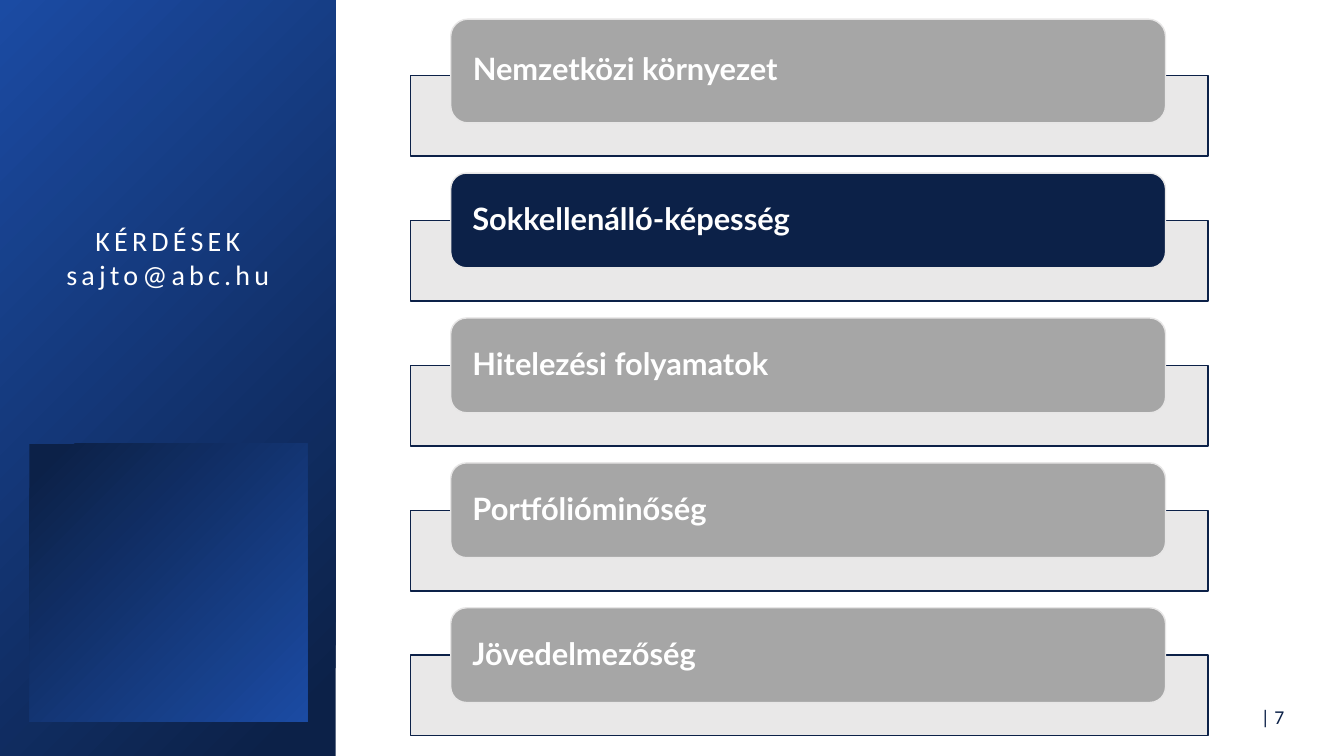
import pptx
import pptx.dml.color
import pptx.enum.shapes
import pptx.enum.text
import pptx.oxml.ns
import pptx.util
import lxml.etree

Inches = pptx.util.Inches
Pt = pptx.util.Pt
Shapes = pptx.enum.shapes.MSO_SHAPE
Align = pptx.enum.text.PP_ALIGN
Anchor = pptx.enum.text.MSO_ANCHOR

NAVY, BLUE, WHITE = "0C2148", "1B4BA3", "FFFFFF"
GREY, PALE = "A6A6A6", "E7E6E6"

TOPICS = [
    "Nemzetközi környezet",
    "Sokkellenálló-képesség",
    "Hitelezési folyamatok",
    "Portfólióminőség",
    "Jövedelmezőség",
]
CURRENT_TOPIC = 1


def color(code):
    return pptx.dml.color.RGBColor.from_string(code)


def add_panel(page, kind, left, top, width, height, fill=None, line=None, alpha=None):
    panel = page.shapes.add_shape(
        kind, Inches(left), Inches(top), Inches(width), Inches(height))
    panel.shadow.inherit = False
    if fill:
        panel.fill.solid()
        panel.fill.fore_color.rgb = color(fill)
    else:
        panel.fill.gradient()
        panel.fill.gradient_angle = 135
        for stop, position, code in zip(panel.fill.gradient_stops, (0.06, 1), (NAVY, BLUE)):
            stop.position = position
            stop.color.rgb = color(code)
    if alpha:
        solid = panel.fill._xPr.find(pptx.oxml.ns.qn("a:solidFill"))
        lxml.etree.SubElement(solid[0], pptx.oxml.ns.qn("a:alpha"), val=str(alpha * 1000))
    if line:
        panel.line.color.rgb = color(line)
        panel.line.width = Pt(1)
    else:
        panel.line.fill.background()
    return panel


def write(box, text, size, code, font="Calibri", bold=False, align=Align.LEFT,
          anchor=Anchor.MIDDLE, inset=(0.1, 0.05), line_spacing=1.0, tracking=0):
    frame = box.text_frame
    frame.word_wrap = True
    frame.vertical_anchor = anchor
    frame.margin_left = frame.margin_right = Inches(inset[0])
    frame.margin_top = frame.margin_bottom = Inches(inset[1])
    for index, line in enumerate(text.split("\n")):
        para = frame.add_paragraph() if index else frame.paragraphs[0]
        para.alignment = align
        para.line_spacing = line_spacing
        span = para.add_run()
        span.text = line
        span.font.name = font
        span.font.size = Pt(size)
        span.font.bold = bold
        span.font.color.rgb = color(code)
        if tracking:
            span.font._element.set("spc", str(tracking * 100))


def add_text(page, left, top, width, height, text, **style):
    box = page.shapes.add_textbox(Inches(left), Inches(top), Inches(width), Inches(height))
    write(box, text, **style)


def add_sidebar(page, left, top, width, height):
    add_panel(page, Shapes.RECTANGLE, left, top, width, height)
    square = add_panel(page, Shapes.RECTANGLE, left + 0.29, top + 4.4, 2.76, 2.76)
    square.rotation = 180
    add_text(page, left + 0.4, top + 2.17, width - 0.8, 0.77, "KÉRDÉSEK\nsajto@abc.hu",
             size=20, code=WHITE, align=Align.CENTER, anchor=Anchor.TOP, tracking=3)


def add_topic(page, left, top, width, height, text, label_height, label_fill):
    add_panel(page, Shapes.RECTANGLE, left, top, width, height,
              fill=PALE, line=NAVY, alpha=90)
    label_top = top + 0.47 - label_height
    label = add_panel(page, Shapes.ROUNDED_RECTANGLE, left + 0.4, label_top,
                      7.09, label_height, fill=label_fill, line=PALE)
    write(label, text, size=22, code=WHITE, font="Lato", bold=True,
          inset=(0.17, 0), line_spacing=0.9)


def add_agenda(page, left, top, width, height):
    row_height = 0.8
    pitch = (height - row_height) / (len(TOPICS) - 1)
    for index, topic in enumerate(TOPICS):
        add_topic(page, left, top + index * pitch, width, row_height, topic,
                  label_height=0.94 if index else 1.03,
                  label_fill=NAVY if index == CURRENT_TOPIC else GREY)


def main():
    deck = pptx.Presentation()
    deck.slide_width = Inches(13.33)
    deck.slide_height = Inches(7.5)
    page = deck.slides.add_slide(deck.slide_layouts[6])
    add_sidebar(page, 0, 0, 3.33, 7.5)
    add_text(page, 12.19, 6.9, 0.69, 0.41, "| 7 ", size=14, code=NAVY, align=Align.RIGHT)
    add_agenda(page, 4.07, 0.75, 7.91, 6.55)
    deck.save("out.pptx")


if __name__ == "__main__":
    main()
